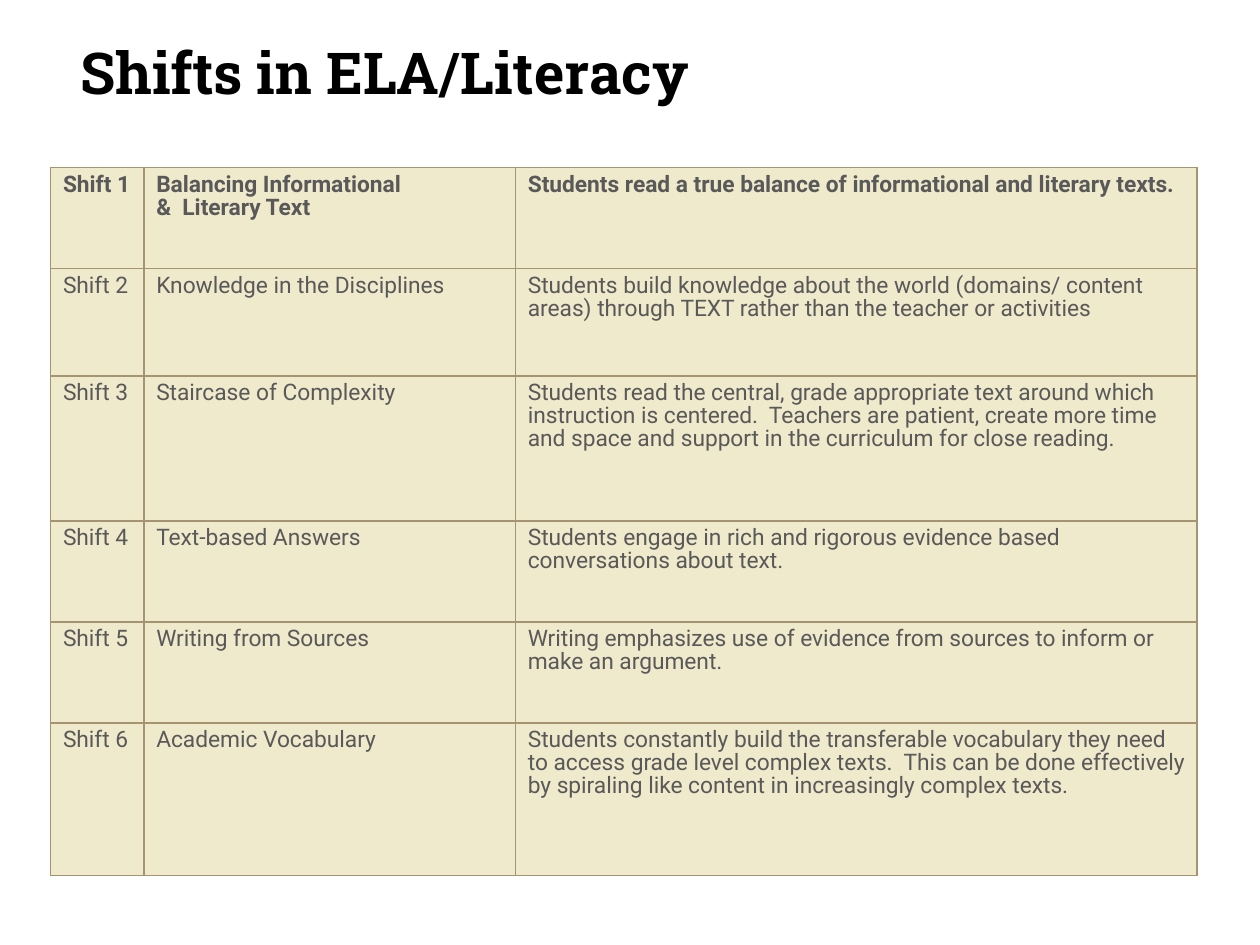
import pptx
import pptx.dml.color
import pptx.enum.text
import pptx.oxml
import pptx.oxml.ns
import pptx.util
from pptx.util import Cm, Pt

INK = "595959"
SAND = "EFEACC"
BORDER = "A69372"

COLUMN_WIDTHS = [1.88, 7.49, 13.74]
ROW_HEIGHTS = [2.03, 2.16, 2.92, 2.03, 2.03, 3.07]
SHIFTS = [
    ("Balancing Informational\n&  Literary Text",
     "Students read a true balance of informational and literary texts."),
    ("Knowledge in the Disciplines",
     "Students build knowledge about the world (domains/ content areas) "
     "through TEXT rather than the teacher or activities"),
    ("Staircase of Complexity",
     "Students read the central, grade appropriate text around which "
     "instruction is centered.  Teachers are patient, create more time and "
     "space and support in the curriculum for close reading."),
    ("Text-based Answers",
     "Students engage in rich and rigorous evidence based conversations "
     "about text."),
    ("Writing from Sources",
     "Writing emphasizes use of evidence from sources to inform or make an "
     "argument."),
    ("Academic Vocabulary",
     "Students constantly build the transferable vocabulary they need to "
     "access grade level complex texts.  This can be done effectively by "
     "spiraling like content in increasingly complex texts."),
]


def color(value):
    return pptx.dml.color.RGBColor.from_string(value)


def set_font(paragraph, name, size, ink, bold):
    font = paragraph.font
    font.name = name
    font.size = Pt(size)
    font.bold = bold
    font.color.rgb = color(ink)


def add_title(slide, left, top, width, height):
    frame = slide.shapes.add_textbox(left, top, width, height).text_frame
    frame.word_wrap = True
    frame.vertical_anchor = pptx.enum.text.MSO_ANCHOR.MIDDLE
    heading = frame.paragraphs[0]
    heading.text = "Shifts in ELA/Literacy"
    heading.line_spacing = 0.9
    set_font(heading, "Roboto Slab", 33, "000000", True)


def add_borders(cell):
    """Draw all four sides; the lines must precede the fill in the cell."""
    properties = cell._tc.get_or_add_tcPr()
    for position, side in enumerate(("lnL", "lnR", "lnT", "lnB")):
        line = pptx.oxml.parse_xml(
            f'<a:{side} {pptx.oxml.ns.nsdecls("a")} w="{Pt(1)}"><a:solidFill>'
            f'<a:srgbClr val="{BORDER}"/></a:solidFill></a:{side}>')
        properties.insert(position, line)


def fill_cell(cell, text, is_first_row):
    cell.text = text
    cell.margin_left = cell.margin_right = Cm(0.25)
    cell.margin_top = Cm(0.15)
    cell.margin_bottom = 0
    cell.fill.solid()
    cell.fill.fore_color.rgb = color(SAND)
    add_borders(cell)
    for paragraph in cell.text_frame.paragraphs:
        paragraph.line_spacing = Pt(13)
        paragraph.space_before = Pt(0 if is_first_row else 0.2)
        set_font(paragraph, "Roboto", 13, INK, is_first_row)


def add_shift_table(slide, left, top, width, height):
    table = slide.shapes.add_table(
        len(SHIFTS), len(COLUMN_WIDTHS), left, top, width, height).table
    table.first_row = table.horz_banding = False
    for column, share in zip(table.columns, COLUMN_WIDTHS):
        column.width = int(width * share / sum(COLUMN_WIDTHS))
    for row, share in zip(table.rows, ROW_HEIGHTS):
        row.height = int(height * share / sum(ROW_HEIGHTS))
    for index, (name, description) in enumerate(SHIFTS):
        texts = (f"Shift {index + 1}", name, description)
        for cell, text in zip(table.rows[index].cells, texts):
            fill_cell(cell, text, index == 0)


def main():
    presentation = pptx.Presentation()
    presentation.slide_width = Cm(25.4)
    presentation.slide_height = Cm(19.05)
    slide = presentation.slides.add_slide(presentation.slide_layouts[6])
    add_title(slide, Cm(1.37), Cm(0.69), Cm(22.86), Cm(1.68))
    add_shift_table(slide, Cm(1.02), Cm(3.38), Cm(23.11), Cm(14.27))
    presentation.save("out.pptx")


if __name__ == "__main__":
    main()
